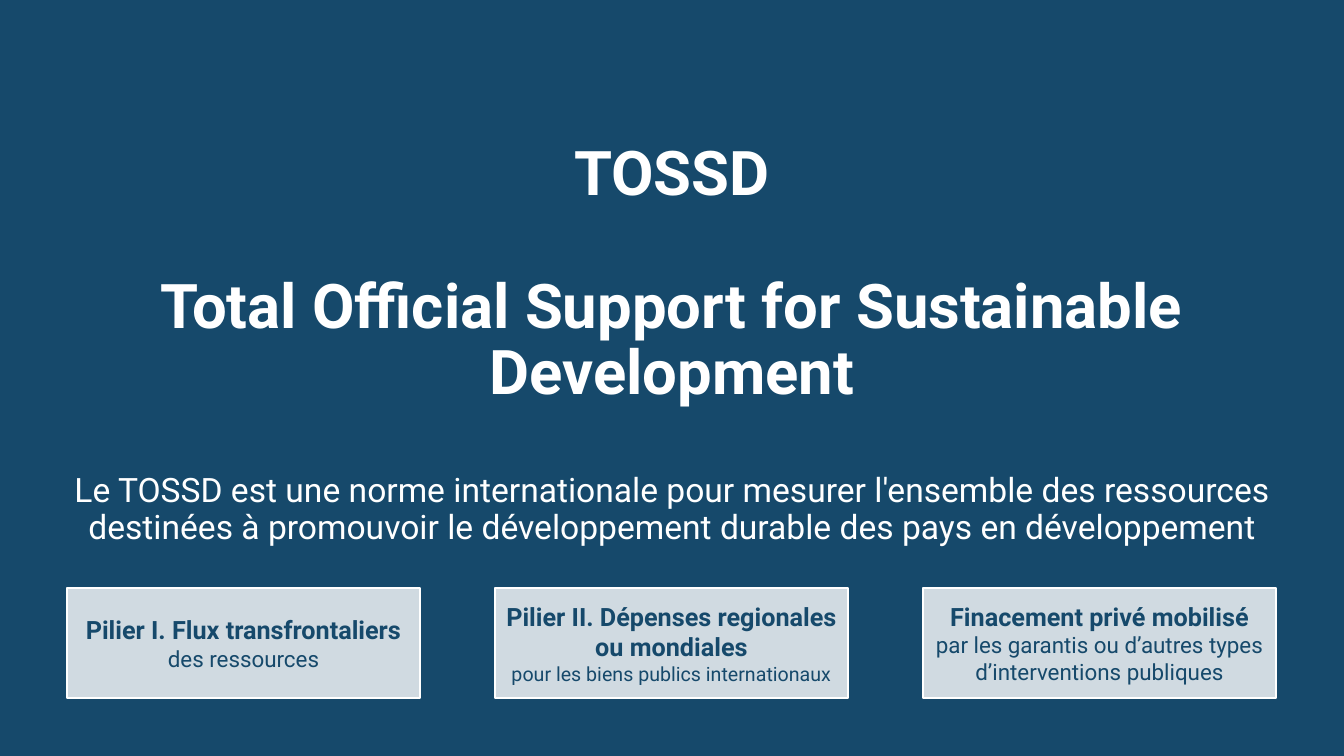
from dataclasses import dataclass

from lxml import etree
from pptx import Presentation
from pptx import util as u
from pptx.dml import color
from pptx.enum import shapes, text
from pptx.oxml import ns

PX = 914400 / 100.8


@dataclass(frozen=True)
class Theme:
    font: str = "Roboto"
    navy: color.RGBColor = color.RGBColor(0x16, 0x49, 0x6B)
    white: color.RGBColor = color.RGBColor(0xFF, 0xFF, 0xFF)
    title: int = 44
    definition: int = 24
    pillar: int = 18
    detail: int = 16
    small_detail: int = 14


THEME = Theme()

HEADINGS = ["TOSSD", "Total Official Support for Sustainable Development"]
DEFINITION = (
    "Le TOSSD est une norme internationale pour mesurer l'ensemble des ressources "
    "destinées à promouvoir le développement durable des pays en développement"
)
PILLARS = [
    ("Pilier I. Flux transfrontaliers", "des ressources", THEME.detail),
    ("Pilier II. Dépenses regionales ou mondiales",
     "pour les biens publics internationaux", THEME.small_detail),
    ("Finacement privé mobilisé",
     "par les garantis ou d’autres types d’interventions publiques", THEME.detail),
]


def px(n):
    return u.Emu(round(n * PX))


def place(sp, left, top, width, height):
    sp.left, sp.top, sp.width, sp.height = map(px, (left, top, width, height))


def fill(sp, rgb):
    sp.fill.solid()
    sp.fill.fore_color.rgb = rgb


def set_alpha(sp, percent):
    clr = sp._element.spPr.find(ns.qn("a:solidFill"))[0]
    etree.SubElement(clr, ns.qn("a:alpha"), val=str(percent * 1000))


def prepare_text(sp):
    tf = sp.text_frame
    tf.word_wrap = True
    tf.auto_size = text.MSO_AUTO_SIZE.NONE
    tf.vertical_anchor = text.MSO_ANCHOR.MIDDLE
    return tf


def add_line(tf, words, size, rgb, bold, gap=0, spacing=1.0):
    first = tf.paragraphs[0]
    p = tf.add_paragraph() if first.runs else first
    p.alignment = text.PP_ALIGN.CENTER
    p.line_spacing = spacing
    p.space_before = u.Pt(gap)
    r = p.add_run()
    r.text = words
    r.font.name = THEME.font
    r.font.size = u.Pt(size)
    r.font.bold = bold
    r.font.color.rgb = rgb


def fill_title(sp):
    place(sp, 0, 0, 1344, 756)
    fill(sp, THEME.navy)
    tf = prepare_text(sp)
    tf.margin_bottom = px(72)
    for i, words in enumerate(HEADINGS):
        add_line(tf, words, THEME.title, THEME.white, True, 47 * i, 0.9)
    add_line(tf, DEFINITION, THEME.definition, THEME.white, False, 47, 0.9)


def add_pillar(slide, left, name, detail, detail_size):
    sp = slide.shapes.add_shape(shapes.MSO_SHAPE.RECTANGLE, 0, 0, 0, 0)
    place(sp, left, 588, 353, 110)
    sp.shadow.inherit = False
    fill(sp, THEME.white)
    set_alpha(sp, 80)
    sp.line.color.rgb = THEME.white
    sp.line.width = u.Pt(1.5)
    tf = prepare_text(sp)
    add_line(tf, name, THEME.pillar, THEME.navy, True)
    add_line(tf, detail, detail_size, THEME.navy, False)


def main():
    prs = Presentation()
    prs.slide_width, prs.slide_height = px(1344), px(756)
    slide = prs.slides.add_slide(prs.slide_layouts[5])
    fill_title(slide.shapes.title)
    for i, pillar in enumerate(PILLARS):
        add_pillar(slide, 67 + 428 * i, *pillar)
    prs.save("out.pptx")


if __name__ == "__main__":
    main()
